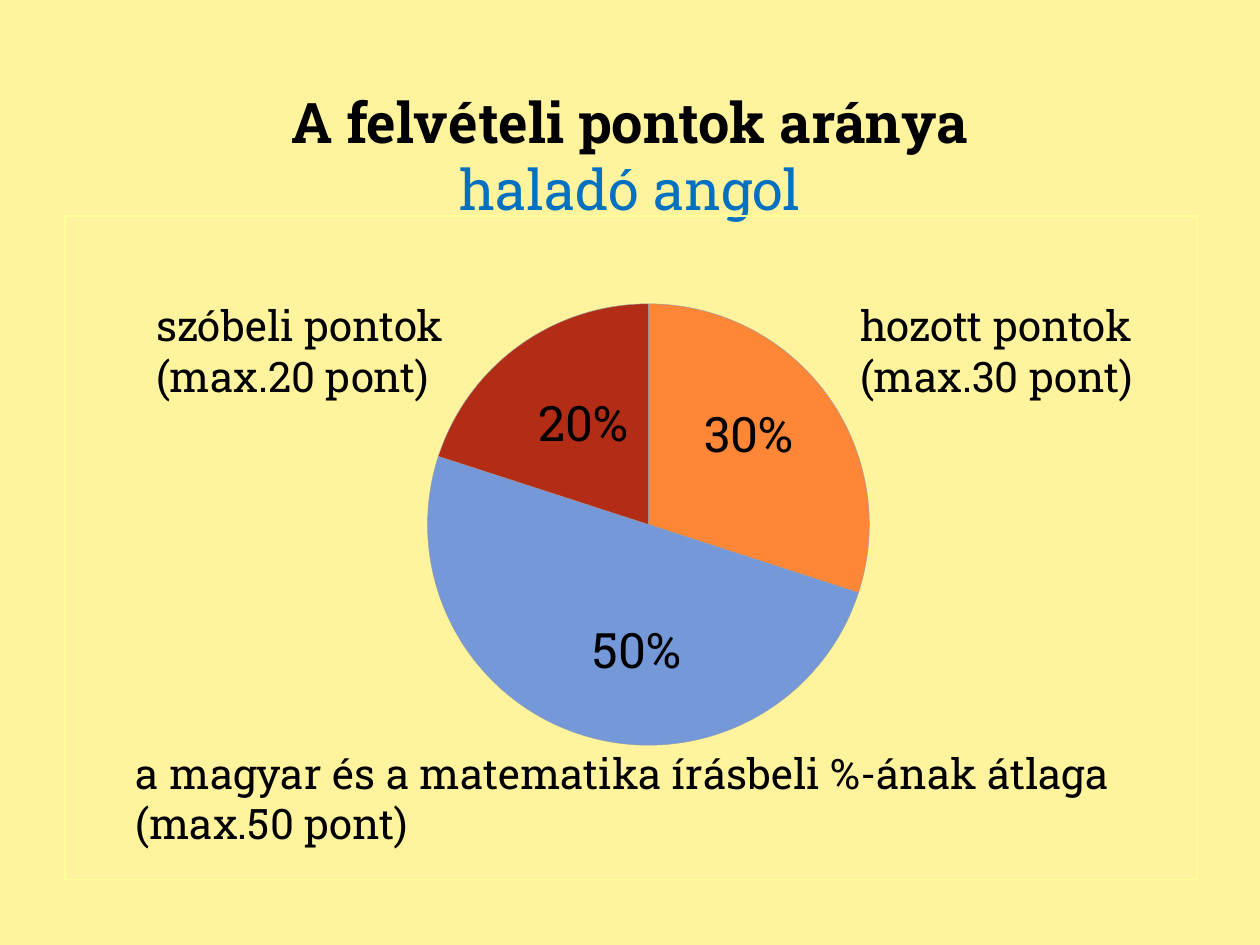
from dataclasses import dataclass

from lxml import etree
from pptx import Presentation
from pptx import util as u
from pptx.chart.data import CategoryChartData
from pptx.dml.color import RGBColor
from pptx.enum import chart as charts, text
from pptx.oxml import parse_xml
from pptx.oxml.ns import nsdecls, qn


@dataclass(frozen=True)
class Theme:
    paper: str = "FFF39D"
    ink: str = "000000"
    accent: str = "0070C0"
    slices: tuple = ("FE8637", "7598D9", "B32C16")
    slice_line: str = "969EAB"
    frame: str = "FFFF99"
    font: str = "Roboto Slab"
    title: int = 32
    percent: int = 28
    label: int = 24


theme = Theme()


def style(font, size, color=theme.ink, bold=False):
    font.name, font.size, font.bold = theme.font, u.Pt(size), bold
    font.color.rgb = RGBColor.from_string(color)


def manual_layout(x, y, size=""):
    """Return a chart layout; x and y are fractions of the chart's size."""
    target = '<c:layoutTarget val="inner"/><c:xMode val="edge"/><c:yMode val="edge"/>' if size else ""
    return parse_xml(
        f'<c:layout {nsdecls("c")}><c:manualLayout>{target}'
        f'<c:x val="{x}"/><c:y val="{y}"/>{size}</c:manualLayout></c:layout>'
    )


deck = Presentation()
deck.slide_width, deck.slide_height = u.Cm(25.4), u.Cm(19.05)
page = deck.slides.add_slide(deck.slide_layouts[6])
page.background.fill.solid()
page.background.fill.fore_color.rgb = RGBColor.from_string(theme.paper)

# Title
box = page.shapes.add_textbox(u.Cm(1.27), u.Cm(1.32), u.Cm(22.86), u.Cm(3.61))
box.text_frame.word_wrap = True
box.text_frame.vertical_anchor = text.MSO_ANCHOR.MIDDLE
para = box.text_frame.paragraphs[0]
para.alignment = text.PP_ALIGN.CENTER
span = para.add_run()
span.text = "A felvételi pontok aránya"
style(span.font, theme.title, bold=True)
para.add_line_break()
span = para.add_run()
span.text = "haladó angol"
style(span.font, theme.title, theme.accent)

# Pie of the point shares
shares = CategoryChartData(number_format="0%")
shares.categories = ["1", "2", "3"]
shares.add_series("Series 1", (0.3, 0.5, 0.2))
pie = page.shapes.add_chart(
    charts.XL_CHART_TYPE.PIE, u.Cm(1.3), u.Cm(4.34), u.Cm(22.86), u.Cm(13.41), shares
).chart
pie.has_legend = False
pie.has_title = False
style(pie.font, theme.percent)

plot = pie.plots[0]
plot.vary_by_categories = True
series = plot.series[0]
labels = series.data_labels
labels.show_value = True
labels.number_format, labels.number_format_is_linked = "0%", False
labels.position = charts.XL_LABEL_POSITION.CENTER
style(labels.font, theme.percent)

label_shifts = ((0.01, -0.04), (0.02, 0.03), (0, -0.02))
for index, (color, shift) in enumerate(zip(theme.slices, label_shifts)):
    point = series.points[index]
    point.format.fill.solid()
    point.format.fill.fore_color.rgb = RGBColor.from_string(color)
    point.format.line.color.rgb = RGBColor.from_string(theme.slice_line)
    point.format.line.width = u.Pt(0.25)
    point.data_label.position = charts.XL_LABEL_POSITION.CENTER
    style(point.data_label.font, theme.percent)

space = pie.element
for label, shift in zip(space.iter(qn("c:dLbl")), label_shifts):
    label.find(qn("c:idx")).addnext(manual_layout(*shift))

area = space.find(".//" + qn("c:plotArea"))
for layout in area.findall(qn("c:layout")):
    area.remove(layout)
area.insert(0, manual_layout(0.32, 0.11, '<c:w val="0.39"/><c:h val="0.71"/>'))

frame = parse_xml(
    f'<c:spPr {nsdecls("c", "a")}><a:noFill/><a:ln w="{u.Pt(0.75)}"><a:solidFill>'
    f'<a:srgbClr val="{theme.frame}"/></a:solidFill></a:ln></c:spPr>'
)
space.find(qn("c:chart")).addnext(frame)

# Captions around the pie
captions = (
    ("a magyar és a matematika írásbeli %-ának átlaga (max.50 pont)", 2.49, 14.94, 20.8),
    ("hozott pontok (max.30 pont)", 17.09, 5.92, 7.06),
    ("szóbeli pontok (max.20 pont)", 2.9, 5.92, 7.19),
)
for wording, left, top, width in captions:
    box = page.shapes.add_textbox(u.Cm(left), u.Cm(top), u.Cm(width), u.Cm(2.31))
    box.text_frame.word_wrap = True
    box.text_frame.auto_size = text.MSO_AUTO_SIZE.SHAPE_TO_FIT_TEXT
    span = box.text_frame.paragraphs[0].add_run()
    span.text = wording
    style(span.font, theme.label)

deck.save("out.pptx")
